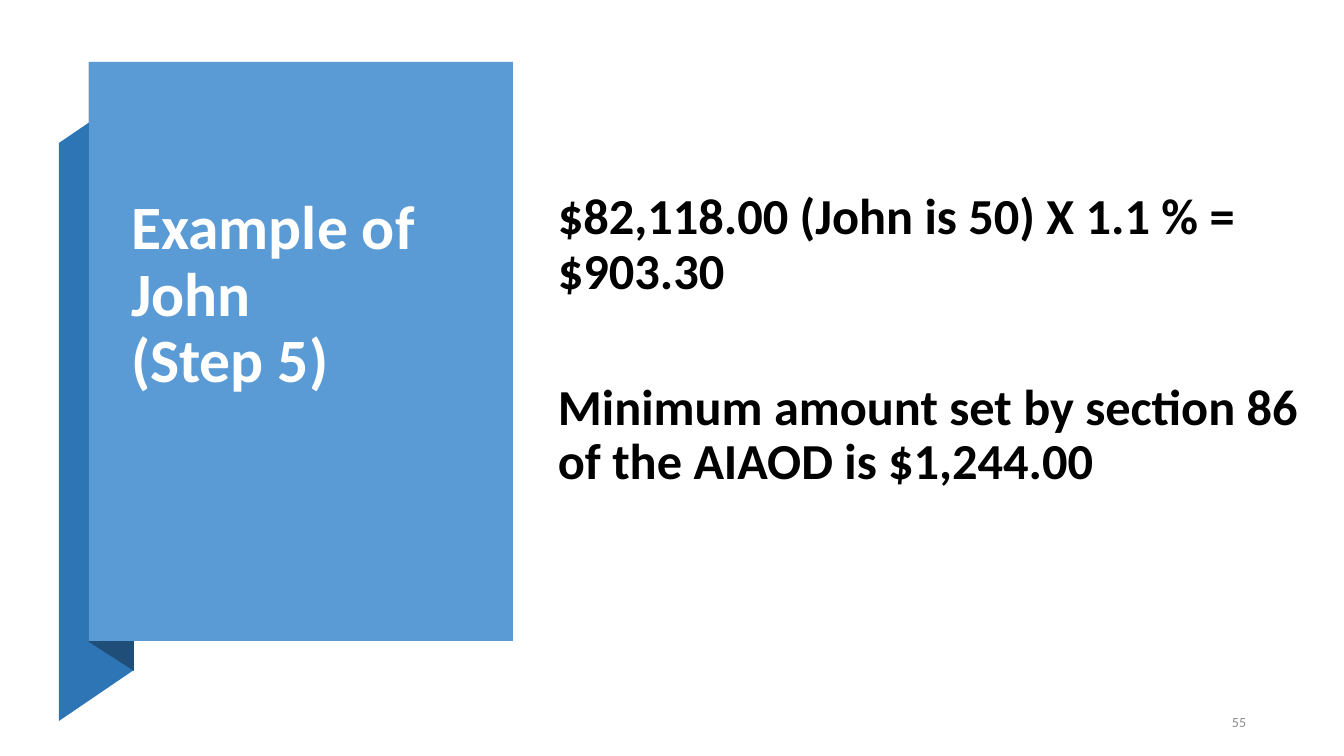
import pptx
import pptx.util
import pptx.dml.color
import pptx.enum.shapes
import pptx.enum.text

# Content
TITLE_LINES = ["Example of John", "(Step 5)"]
BODY_PARAGRAPHS = [
    "$82,118.00 (John is 50) X 1.1 % = $903.30",
    "Minimum amount set by section 86 of the AIAOD is $1,244.00",
]
SLIDE_NUMBER = "55"

FONT = "Calibri"
COLORS = {
    "panel": "5B9BD5",
    "ribbon": "2E75B6",
    "fold": "1F4E79",
    "title": "FFFFFF",
    "body": "000000",
    "number": "8C8C8C",
}

# Geometry in px: left, top, width, height
EMU_PER_PX = 914400 / 100.8
SLIDE_SIZE = (1344, 756)
PANEL_BOX = (89, 62, 424, 579)
TITLE_BOX = (121, 98, 356, 303)
BODY_BOX = (548, 98, 765, 566)
NUMBER_BOX = (1180, 704, 76, 35)
BODY_BOTTOM_INSET = 85
RIBBON_POINTS = [(59, 721), (134, 670), (134, 92), (59, 143)]
FOLD_POINTS = [(89, 642), (134, 671), (134, 91), (89, 62)]


def px(length):
    return pptx.util.Emu(round(length * EMU_PER_PX))


def paint(shape, color):
    shape.shadow.inherit = False
    shape.fill.solid()
    shape.fill.fore_color.rgb = pptx.dml.color.RGBColor.from_string(COLORS[color])
    shape.line.fill.background()


def add_outline(slide, points, color):
    builder = slide.shapes.build_freeform(*points[0], scale=EMU_PER_PX)
    builder.add_line_segments(points[1:], close=True)
    paint(builder.convert_to_shape(), color)


def prepare_frame(shape, anchor):
    frame = shape.text_frame
    frame.word_wrap = True
    frame.auto_size = pptx.enum.text.MSO_AUTO_SIZE.NONE
    frame.vertical_anchor = anchor
    return frame


def add_text(paragraph, text, size, color, bold=False):
    run = paragraph.add_run()
    run.text = text
    run.font.name = FONT
    run.font.size = pptx.util.Pt(size)
    run.font.bold = bold
    run.font.color.rgb = pptx.dml.color.RGBColor.from_string(COLORS[color])


def main():
    presentation = pptx.Presentation()
    presentation.slide_width, presentation.slide_height = map(px, SLIDE_SIZE)
    slide = presentation.slides.add_slide(presentation.slide_layouts[5])
    anchors = pptx.enum.text.MSO_ANCHOR

    # Folded ribbon behind the panel
    add_outline(slide, RIBBON_POINTS, "ribbon")
    add_outline(slide, FOLD_POINTS, "fold")
    panel = slide.shapes.add_shape(
        pptx.enum.shapes.MSO_SHAPE.RECTANGLE, *map(px, PANEL_BOX))
    paint(panel, "panel")

    # Title, brought in front of the panel
    title = slide.shapes.title
    title.left, title.top, title.width, title.height = map(px, TITLE_BOX)
    slide.shapes._spTree.append(title._element)
    paragraph = prepare_frame(title, anchors.BOTTOM).paragraphs[0]
    paragraph.alignment = pptx.enum.text.PP_ALIGN.LEFT
    paragraph.line_spacing = 0.9
    for index, line in enumerate(TITLE_LINES):
        if index:
            paragraph.add_line_break()
        add_text(paragraph, line, 44, "title", bold=True)

    # Body
    body = slide.shapes.add_textbox(*map(px, BODY_BOX))
    frame = prepare_frame(body, anchors.MIDDLE)
    frame.margin_bottom = px(BODY_BOTTOM_INSET)
    for index, text in enumerate(BODY_PARAGRAPHS):
        paragraph = frame.add_paragraph() if index else frame.paragraphs[0]
        paragraph.line_spacing = 0.9
        if index:
            paragraph.space_before = pptx.util.Pt(58)
        add_text(paragraph, text, 36, "body", bold=True)

    # Slide number
    number = slide.shapes.add_textbox(*map(px, NUMBER_BOX))
    paragraph = prepare_frame(number, anchors.MIDDLE).paragraphs[0]
    paragraph.alignment = pptx.enum.text.PP_ALIGN.RIGHT
    add_text(paragraph, SLIDE_NUMBER, 10, "number")

    presentation.save("out.pptx")


if __name__ == "__main__":
    main()
